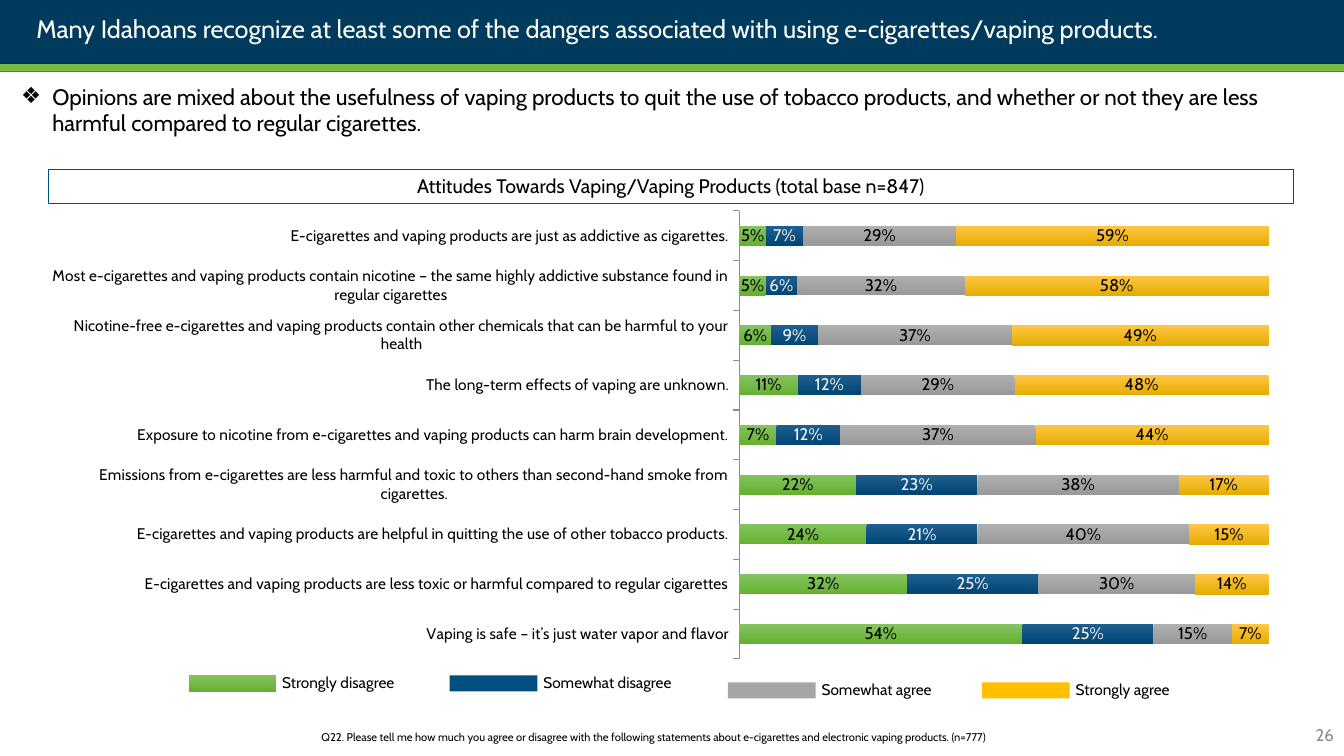
from dataclasses import dataclass

from lxml.etree import SubElement
from pptx import Presentation
from pptx.chart.data import CategoryChartData
from pptx.dml.color import RGBColor
from pptx.enum.chart import XL_CHART_TYPE as ChartType, XL_LABEL_POSITION as LabelPos
from pptx.enum.chart import XL_TICK_LABEL_POSITION as TickLabels, XL_TICK_MARK as Tick
from pptx.enum.shapes import MSO_CONNECTOR as Connector, MSO_SHAPE as Shape
from pptx.enum.text import MSO_ANCHOR as Anchor, MSO_AUTO_SIZE as AutoSize, PP_ALIGN as Align
from pptx.oxml import parse_xml
from pptx.oxml.ns import nsdecls, qn
from pptx.util import Inches, Pt


@dataclass(frozen=True)
class Theme:
    font: str = "Cabin"
    black: str = "000000"
    white: str = "FFFFFF"
    pale: str = "F2F2F2"
    gray: str = "8C8C8C"
    navy: str = "003B5E"
    dark_navy: str = "00273F"
    blue: str = "004F7E"
    green: str = "75BA43"
    title: int = 18
    body: int = 16
    heading: int = 14
    value: int = 12
    label: int = 11
    note: int = 8


@dataclass(frozen=True)
class Answer:
    name: str
    shares: tuple[float, ...]
    bar_colors: tuple[str, str]
    key_colors: tuple[str, str]
    value_color: str
    key_left: float
    key_top: float


THEME = Theme()

STATEMENTS = (
    "Vaping is safe – it’s just water vapor and flavor",
    "E-cigarettes and vaping products are less toxic or harmful compared to regular cigarettes",
    "E-cigarettes and vaping products are helpful in quitting the use of other tobacco products.",
    "Emissions from e-cigarettes are less harmful and toxic to others than second-hand smoke "
    "from cigarettes.",
    "Exposure to nicotine from e-cigarettes and vaping products can harm brain development.",
    "The long-term effects of vaping are unknown.",
    "Nicotine-free e-cigarettes and vaping products contain other chemicals that can be harmful "
    "to your health",
    "Most e-cigarettes and vaping products contain nicotine – the same highly addictive substance "
    "found in regular cigarettes",
    "E-cigarettes and vaping products are just as addictive as cigarettes.",
)

ANSWERS = (
    Answer("Strongly disagree", (0.54, 0.32, 0.24, 0.22, 0.07, 0.11, 0.06, 0.05, 0.05),
           ("85C360", "66B031"), ("85C360", "66B031"), THEME.black, 1.87, 6.63),
    Answer("Somewhat disagree", (0.25, 0.25, 0.21, 0.23, 0.12, 0.12, 0.09, 0.06, 0.07),
           ("1F5F8F", "004573"), (THEME.blue, THEME.blue), THEME.pale, 4.46, 6.63),
    Answer("Somewhat agree", (0.15, 0.30, 0.40, 0.38, 0.37, 0.29, 0.37, 0.32, 0.29),
           ("AFAFAF", "999999"), ("A5A5A5", "A5A5A5"), THEME.black, 7.22, 6.70),
    Answer("Strongly agree", (0.07, 0.14, 0.15, 0.17, 0.44, 0.48, 0.49, 0.58, 0.59),
           ("FFC746", "E5AC00"), ("FFC000", "FFC000"), THEME.black, 9.74, 6.70),
)


def rgb(color: str) -> RGBColor:
    return RGBColor.from_string(color)


def paint(fill, top: str, bottom: str) -> None:
    """Fill with one colour, or fade downwards between two."""
    if top == bottom:
        fill.solid()
        fill.fore_color.rgb = rgb(top)
        return
    fill.gradient()
    fill.gradient_angle = 270
    for stop, color in zip(fill.gradient_stops, (top, bottom)):
        stop.color.rgb = rgb(color)


def style_font(font, size: int, color: str) -> None:
    font.name = THEME.font
    font.size = Pt(size)
    font.bold = False
    font.color.rgb = rgb(color)


def write(holder, text: str, *, size: int, color: str = THEME.black, align=Align.LEFT,
          anchor=Anchor.TOP, bullet: str = ""):
    frame = holder.text_frame
    frame.word_wrap = True
    frame.auto_size = AutoSize.NONE
    frame.vertical_anchor = anchor
    paragraph = frame.paragraphs[0]
    if bullet:
        props = paragraph._p.get_or_add_pPr()
        props.set("marL", str(Inches(0.31)))
        props.set("indent", str(-Inches(0.31)))
        SubElement(props, qn("a:buChar"), char=bullet)
    paragraph.alignment = align
    paragraph.space_before = Pt(0)
    paragraph.line_spacing = 1.0
    run = paragraph.add_run()
    run.text = text
    style_font(run.font, size, color)
    return holder


def place(holder, left: float, top: float, width: float, height: float):
    holder.left, holder.top = Inches(left), Inches(top)
    holder.width, holder.height = Inches(width), Inches(height)
    return holder


def add_text(slide, box: tuple[float, ...], text: str, **style):
    return write(slide.shapes.add_textbox(*map(Inches, box)), text, **style)


def add_band(slide, box: tuple[float, ...], top: str, bottom: str):
    band = slide.shapes.add_shape(Shape.RECTANGLE, *map(Inches, box))
    band.shadow.inherit = False
    band.line.fill.background()
    paint(band.fill, top, bottom)
    return band


def add_key(slide, answer: Answer) -> None:
    add_band(slide, (answer.key_left, answer.key_top + 0.07, 0.87, 0.16), *answer.key_colors)
    add_text(slide, (answer.key_left + 0.83, answer.key_top, 2.26, 0.29), answer.name,
             size=THEME.label)


def add_attitudes_chart(slide) -> None:
    data = CategoryChartData(number_format="0%")
    data.categories = STATEMENTS
    for answer in ANSWERS:
        data.add_series(answer.name, answer.shares)
    box = map(Inches, (0.48, 2, 12.35, 4.63))
    chart = slide.shapes.add_chart(ChartType.BAR_STACKED_100, *box, data).chart
    chart.has_legend = chart.has_title = False
    style_font(chart.font, THEME.title, THEME.black)

    statement_axis, share_axis = chart.category_axis, chart.value_axis
    statement_axis.major_tick_mark = Tick.OUTSIDE
    statement_axis.tick_label_position = TickLabels.LOW
    statement_axis.format.line.color.rgb = rgb(THEME.gray)
    style_font(statement_axis.tick_labels.font, THEME.label, THEME.black)
    share_axis.has_major_gridlines = False
    share_axis.minimum_scale, share_axis.maximum_scale = 0, 1
    share_axis.visible = False

    plot = chart.plots[0]
    plot.gap_width, plot.overlap = 150, 100
    plot.vary_by_categories = False
    for series, answer in zip(plot.series, ANSWERS):
        paint(series.format.fill, *answer.bar_colors)
        labels = series.data_labels
        labels.show_value = True
        labels.number_format, labels.number_format_is_linked = "0%", False
        labels.position = LabelPos.CENTER
        style_font(labels.font, THEME.value, answer.value_color)

    # Fixed plot area, leaving the left half to the statements
    area = chart._chartSpace.chart.plotArea
    for old in area.findall(qn("c:layout")):
        area.remove(old)
    area.insert(0, parse_xml(
        f'<c:layout {nsdecls("c")}><c:manualLayout><c:layoutTarget val="inner"/>'
        '<c:xMode val="edge"/><c:yMode val="edge"/><c:x val="0.555"/><c:y val="0.02"/>'
        '<c:w val="0.425"/><c:h val="0.96"/></c:manualLayout></c:layout>'))


def main() -> None:
    deck = Presentation()
    deck.slide_width, deck.slide_height = Inches(13.33), Inches(7.5)
    slide = deck.slides.add_slide(deck.slide_layouts[1])

    # Header: bands lie behind the title
    headline, summary = slide.shapes.title, slide.placeholders[1]
    for height, color in ((0.71, THEME.dark_navy), (0.63, THEME.navy)):
        band = add_band(slide, (0, 0, 13.33, height), color, color)
        headline.element.addprevious(band.element)
    write(place(headline, 0.26, 0.08, 12.93, 0.4),
          "Many Idahoans recognize at least some of the dangers associated with using "
          "e-cigarettes/vaping products.", size=THEME.title, color=THEME.white)
    rule = slide.shapes.add_connector(Connector.STRAIGHT, 0, Inches(0.67), Inches(13.33),
                                      Inches(0.67))
    rule.line.color.rgb = rgb(THEME.green)
    rule.line.width = Pt(4.5)
    SubElement(rule.element.spPr, qn("a:effectLst"))

    # Summary
    write(place(summary, 0.11, 0.77, 12.84, 1.45),
          "Opinions are mixed about the usefulness of vaping products to quit the use of tobacco "
          "products, and whether or not they are less harmful compared to regular cigarettes.",
          size=THEME.body, bullet="❖")

    # Chart with its heading and key
    heading = add_text(slide, (0.48, 1.68, 12.35, 0.34),
                       "Attitudes Towards Vaping/Vaping Products (total base n=847)",
                       size=THEME.heading, align=Align.CENTER)
    heading.line.color.rgb = rgb(THEME.blue)
    heading.line.width = Pt(0.75)
    add_attitudes_chart(slide)
    for answer in ANSWERS:
        add_key(slide, answer)

    # Footer
    add_text(slide, (3.09, 7.2, 6.89, 0.24),
             "Q22. Please tell me how much you agree or disagree with the following statements "
             "about e-cigarettes and electronic vaping products. (n=777)", size=THEME.note)
    add_text(slide, (10.33, 7.09, 3, 0.4), "26", size=THEME.value, color=THEME.gray,
             align=Align.RIGHT, anchor=Anchor.MIDDLE)
    deck.save("out.pptx")


if __name__ == "__main__":
    main()
